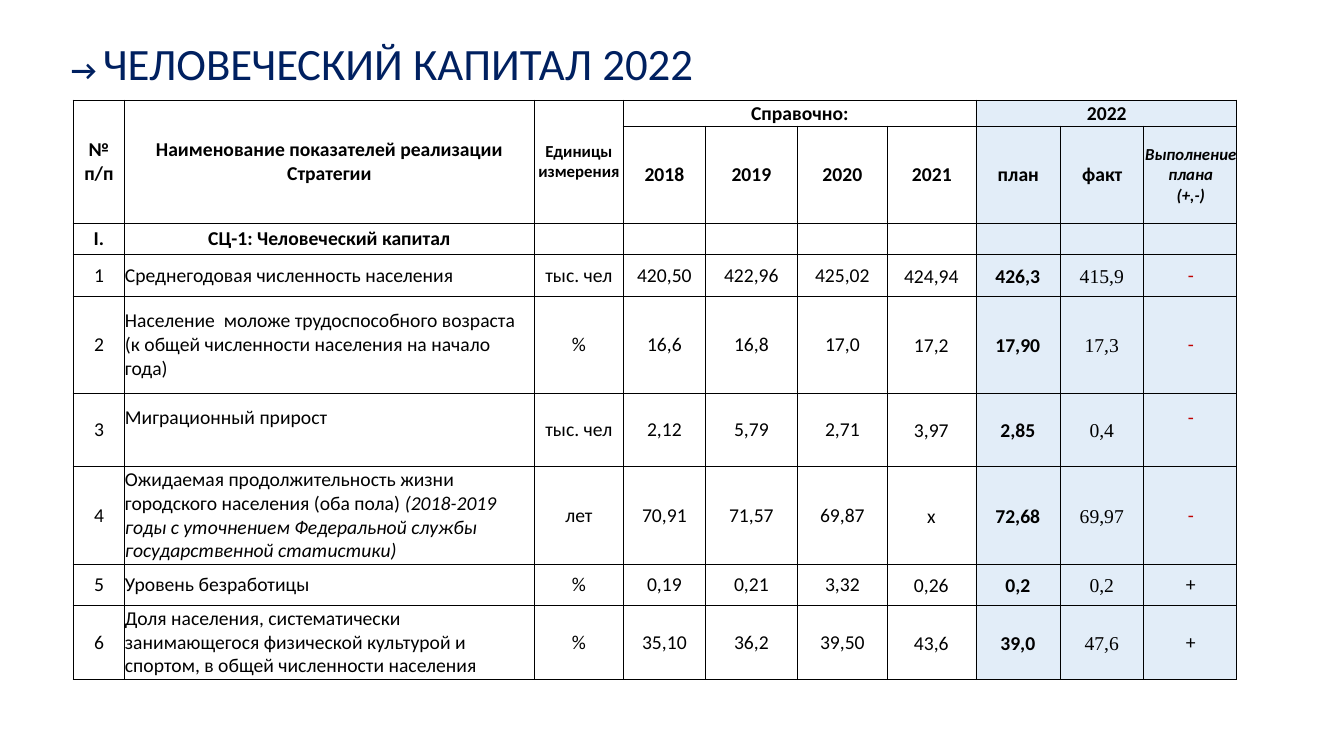
from lxml import etree
from pptx import Presentation
from pptx.dml.color import RGBColor
from pptx.enum.text import MSO_ANCHOR, PP_ALIGN
from pptx.oxml.ns import qn
from pptx.util import Emu, Pt

PX = 914400 / 100.8
LEFT, CENTER = PP_ALIGN.LEFT, PP_ALIGN.CENTER
MIDDLE = MSO_ANCHOR.MIDDLE
TITLE_ONLY = 5
BLACK, NAVY, RED, PALE_BLUE = "000000", "002060", "C00000", "DEEBF7"
SIDES = ("a:lnL", "a:lnR", "a:lnT", "a:lnB")

TITLE_BOX = (61, 30, 648, 65)
TABLE_BOX = (73, 100, 1164, 579)
COLUMN_WIDTHS = (51, 410, 89, 82, 92, 90, 89, 84, 84, 93)
ROW_HEIGHTS = (26, 97, 31, 42, 97, 73, 98, 41, 74)
MERGES = ((0, 0, 1, 0), (0, 1, 1, 1), (0, 2, 1, 2), (0, 3, 0, 6), (0, 7, 0, 9))
NAME, PLAN, FACT, RESULT = 1, 7, 8, 9
SPACED_COLUMNS = (6, PLAN, FACT)
HEADER_ROWS, SECTION_ROW, MIGRATION_ROW = (0, 1), 2, 5
TIGHT_INSETS = (1, 1, 0, 0)
WIDE_INSETS = (7, 0, 7, 0)
RAISED_INSETS = (1, 1, 0, 24)

ROWS = (
    ("№ п/п", "Наименование показателей реализации Стратегии", "Единицы измерения",
     "Справочно:", "", "", "", "2022", "", ""),
    ("", "", "", "2018", "2019", "2020", "2021", "план", "факт", "Выполнение плана\n(+,-)"),
    ("I.", "СЦ-1: Человеческий капитал", "", "", "", "", "", "", "", ""),
    ("1", "Среднегодовая численность населения", "тыс. чел",
     "420,50", "422,96", "425,02", "424,94", "426,3", "415,9", "-"),
    ("2", "Население  моложе трудоспособного возраста\n"
     "(к общей численности населения на начало года)", "%",
     "16,6", "16,8", "17,0", "17,2", "17,90", "17,3", "-"),
    ("3", "Миграционный прирост", "тыс. чел",
     "2,12", "5,79", "2,71", "3,97", "2,85", "0,4", "-"),
    ("4", "Ожидаемая продолжительность жизни городского населения (оба пола) "
     "|(2018-2019 годы с уточнением Федеральной службы государственной статистики)", "лет",
     "70,91", "71,57", "69,87", "х", "72,68", "69,97", "-"),
    ("5", "Уровень безработицы", "%",
     "0,19", "0,21", "3,32", "0,26", "0,2", "0,2", "+"),
    ("6", "Доля населения, систематически занимающегося физической культурой и спортом, "
     "в общей численности населения", "%",
     "35,10", "36,2", "39,50", "43,6", "39,0", "47,6", "+"),
)


def px(length):
    """Turn pixels into EMU."""
    return Emu(round(length * PX))


def color(hex_text):
    """Turn a hex string into a colour."""
    return RGBColor.from_string(hex_text)


def set_values(target, values):
    """Set each named attribute on the target."""
    for name, value in values.items():
        setattr(target, name, value)


def add_span(para, text, hex_text, values):
    """Add a formatted run to a paragraph."""
    span = para.add_run()
    span.text = text
    span.font.color.rgb = color(hex_text)
    set_values(span.font, {"name": "Calibri", "bold": False, "italic": False, **values})


def add_title(page, box):
    """Place the slide heading with its small arrow."""
    title = page.shapes.title
    set_values(title, dict(zip(("left", "top", "width", "height"), map(px, box))))
    set_values(title.text_frame, {"word_wrap": True, "vertical_anchor": MIDDLE})
    para = title.text_frame.paragraphs[0]
    para.alignment = LEFT
    add_span(para, "→ ", NAVY, {"size": Pt(20), "bold": True})
    add_span(para, "ЧЕЛОВЕЧЕСКИЙ КАПИТАЛ 2022", NAVY, {"size": Pt(32)})


def cell_style(row, column, text):
    """Give the font values and text colour of a cell."""
    small = (row, column) in ((0, 2), (1, RESULT))
    values = {
        "size": Pt(12 if small else 14),
        "bold": row <= SECTION_ROW or column == PLAN,
        "italic": (row, column) == (1, RESULT),
        "name": "Times New Roman" if row > SECTION_ROW and column == FACT else "Calibri",
    }
    return values, RED if text == "-" else BLACK


def cell_insets(row, column):
    """Give the left, top, right and bottom insets of a cell."""
    if row == MIGRATION_ROW and column in (NAME, RESULT):
        return RAISED_INSETS
    if row > SECTION_ROW and column in SPACED_COLUMNS:
        return WIDE_INSETS
    return TIGHT_INSETS


def paint_cell(cell, tinted):
    """Draw thin black borders and the pale blue or empty fill."""
    properties = cell._tc.get_or_add_tcPr()
    for side in SIDES:
        line = etree.SubElement(properties, qn(side), w=str(Pt(0.5)))
        fill = etree.SubElement(line, qn("a:solidFill"))
        etree.SubElement(fill, qn("a:srgbClr"), val=BLACK)
    if tinted:
        cell.fill.solid()
        cell.fill.fore_color.rgb = color(PALE_BLUE)
        tint = properties.find(qn("a:solidFill")).find(qn("a:srgbClr"))
        etree.SubElement(tint, qn("a:alpha"), val="85000")
    else:
        cell.fill.background()


def write_cell(cell, row, column, text):
    """Write the paragraphs of one cell."""
    names = ("margin_left", "margin_top", "margin_right", "margin_bottom")
    set_values(cell, dict(zip(names, map(px, cell_insets(row, column)))))
    cell.vertical_anchor = MIDDLE
    values, hex_text = cell_style(row, column, text)
    spaced = row > SECTION_ROW and column in SPACED_COLUMNS
    for index, line in enumerate(text.split("\n")):
        para = cell.text_frame.add_paragraph() if index else cell.text_frame.paragraphs[0]
        para.alignment = LEFT if row > SECTION_ROW and column == NAME else CENTER
        if spaced:
            para.line_spacing = 1.15
        for part, words in enumerate(line.split("|") if line else ()):
            add_span(para, words, hex_text, {**values, "italic": values["italic"] or part > 0})
        if not line:
            etree.SubElement(para._p, qn("a:endParaRPr"), sz="1400")


def add_indicator_table(page, box):
    """Place the table of indicators."""
    frame = page.shapes.add_table(len(ROWS), len(COLUMN_WIDTHS), *map(px, box))
    table = frame.table
    set_values(table, {"first_row": False, "horz_banding": False})
    for column, width in zip(table.columns, COLUMN_WIDTHS):
        column.width = px(width)
    for row, height in zip(table.rows, ROW_HEIGHTS):
        row.height = px(height)
    for row, texts in enumerate(ROWS):
        for column, text in enumerate(texts):
            cell = table.cell(row, column)
            write_cell(cell, row, column, text)
            paint_cell(cell, column >= PLAN)
    for top, left, bottom, right in MERGES:
        table.cell(top, left).merge(table.cell(bottom, right))


def main():
    """Build and save the slide."""
    deck = Presentation()
    set_values(deck, {"slide_width": px(1344), "slide_height": px(756)})
    page = deck.slides.add_slide(deck.slide_layouts[TITLE_ONLY])
    add_title(page, TITLE_BOX)
    add_indicator_table(page, TABLE_BOX)
    deck.save("out.pptx")


if __name__ == "__main__":
    main()
